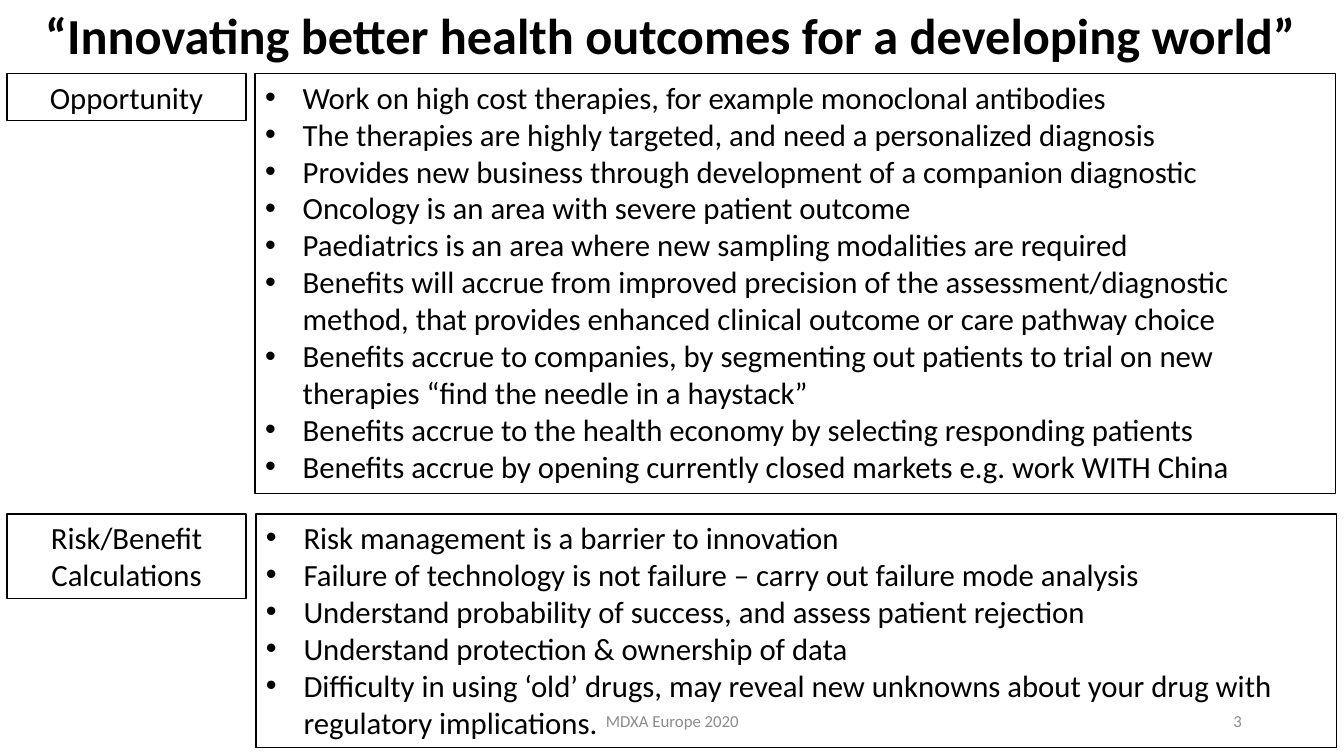
from dataclasses import dataclass

from lxml.etree import SubElement
from pptx import Presentation
from pptx.dml.color import RGBColor
from pptx.enum.shapes import MSO_SHAPE
from pptx.enum.text import MSO_ANCHOR as Anchor
from pptx.enum.text import MSO_AUTO_SIZE as AutoSize
from pptx.enum.text import PP_ALIGN as Align
from pptx.oxml.ns import qn
from pptx.slide import Slide
from pptx.text.text import TextFrame, _Paragraph as Paragraph
from pptx.util import Cm, Pt


@dataclass(frozen=True)
class Theme:
    font: str = "Calibri"
    ink: RGBColor = RGBColor(0x00, 0x00, 0x00)
    muted: RGBColor = RGBColor(0x8C, 0x8C, 0x8C)
    title_size: int = 36
    body_size: int = 22
    footer_size: int = 12
    line_width: int = 1


@dataclass(frozen=True)
class Area:
    left: float
    top: float
    width: float
    height: float

    def lengths(self) -> tuple[Cm, Cm, Cm, Cm]:
        return Cm(self.left), Cm(self.top), Cm(self.width), Cm(self.height)


@dataclass(frozen=True)
class Label:
    text: str
    area: Area
    size: int
    color: RGBColor
    align: Align = Align.CENTER
    bold: bool = False
    line_spacing: float = 1.0


@dataclass(frozen=True)
class Section:
    heading: str
    top: float
    heading_height: float
    points_left: float
    points_height: float
    points: tuple[str, ...]


THEME = Theme()
HEADING_LEFT, HEADING_WIDTH = 0.18, 6.02
POINTS_WIDTH = 27.23
BULLET_INDENT = Cm(0.95)
FOOTER_TOP, FOOTER_HEIGHT = 17.65, 1.02

LABELS = (
    Label("“Innovating better health outcomes for a developing world”",
          Area(0.48, 0.08, 32.84, 1.75), THEME.title_size, THEME.ink,
          bold=True, line_spacing=0.9),
    Label("MDXA Europe 2020", Area(11.23, FOOTER_TOP, 11.43, FOOTER_HEIGHT),
          THEME.footer_size, THEME.muted),
    Label("3", Area(23.93, FOOTER_TOP, 7.62, FOOTER_HEIGHT),
          THEME.footer_size, THEME.muted, Align.RIGHT),
)

SECTIONS = (
    Section("Opportunity", 1.85, 1.19, 6.43, 10.59, (
        "Work on high cost therapies, for example monoclonal antibodies",
        "The therapies are highly targeted, and need a personalized diagnosis",
        "Provides new business through development of a companion diagnostic",
        "Oncology is an area with severe patient outcome",
        "Paediatrics is an area where new sampling modalities are required",
        "Benefits will accrue from improved precision of the assessment/diagnostic "
        "method, that provides enhanced clinical outcome or care pathway choice",
        "Benefits accrue to companies, by segmenting out patients to trial on new "
        "therapies “find the needle in a haystack”",
        "Benefits accrue to the health economy by selecting responding patients",
        "Benefits accrue by opening currently closed markets e.g. work WITH China",
    )),
    Section("Risk/Benefit Calculations", 12.95, 2.13, 6.45, 5.89, (
        "Risk management is a barrier to innovation",
        "Failure of technology is not failure – carry out failure mode analysis",
        "Understand probability of success, and assess patient rejection",
        "Understand protection & ownership of data",
        "Difficulty in using ‘old’ drugs, may reveal new unknowns about your drug "
        "with regulatory implications.",
    )),
)


def add_run(paragraph: Paragraph, text: str, size: int, color: RGBColor,
            bold: bool = False) -> None:
    run = paragraph.add_run()
    run.text = text
    run.font.name = THEME.font
    run.font.size = Pt(size)
    run.font.bold = bold
    run.font.color.rgb = color


def add_bullet(paragraph: Paragraph) -> None:
    properties = paragraph._p.get_or_add_pPr()
    properties.set("marL", str(BULLET_INDENT))
    properties.set("indent", str(-BULLET_INDENT))
    SubElement(properties, qn("a:buFont"), typeface="Arial")
    SubElement(properties, qn("a:buChar"), char="•")


def add_label(slide: Slide, label: Label) -> None:
    frame = slide.shapes.add_textbox(*label.area.lengths()).text_frame
    frame.word_wrap = True
    frame.vertical_anchor = Anchor.MIDDLE
    paragraph = frame.paragraphs[0]
    paragraph.alignment = label.align
    paragraph.line_spacing = label.line_spacing
    add_run(paragraph, label.text, label.size, label.color, label.bold)


def add_box(slide: Slide, area: Area) -> TextFrame:
    shape = slide.shapes.add_shape(MSO_SHAPE.RECTANGLE, *area.lengths())
    shape.shadow.inherit = False
    shape.fill.background()
    shape.line.color.rgb = THEME.ink
    shape.line.width = Pt(THEME.line_width)
    frame = shape.text_frame
    frame.word_wrap = True
    frame.auto_size = AutoSize.SHAPE_TO_FIT_TEXT
    frame.vertical_anchor = Anchor.TOP
    return frame


def add_section(slide: Slide, section: Section) -> None:
    heading = add_box(slide, Area(HEADING_LEFT, section.top, HEADING_WIDTH,
                                  section.heading_height)).paragraphs[0]
    heading.alignment = Align.CENTER
    add_run(heading, section.heading, THEME.body_size, THEME.ink)

    frame = add_box(slide, Area(section.points_left, section.top, POINTS_WIDTH,
                                section.points_height))
    for index, point in enumerate(section.points):
        paragraph = frame.add_paragraph() if index else frame.paragraphs[0]
        paragraph.alignment = Align.LEFT
        add_bullet(paragraph)
        add_run(paragraph, point, THEME.body_size, THEME.ink)


def main() -> None:
    presentation = Presentation()
    presentation.slide_width = Cm(33.87)
    presentation.slide_height = Cm(19.05)
    slide = presentation.slides.add_slide(presentation.slide_layouts[6])
    title, *footers = LABELS
    add_label(slide, title)
    for section in SECTIONS:
        add_section(slide, section)
    for footer in footers:
        add_label(slide, footer)
    presentation.save("out.pptx")


if __name__ == "__main__":
    main()
